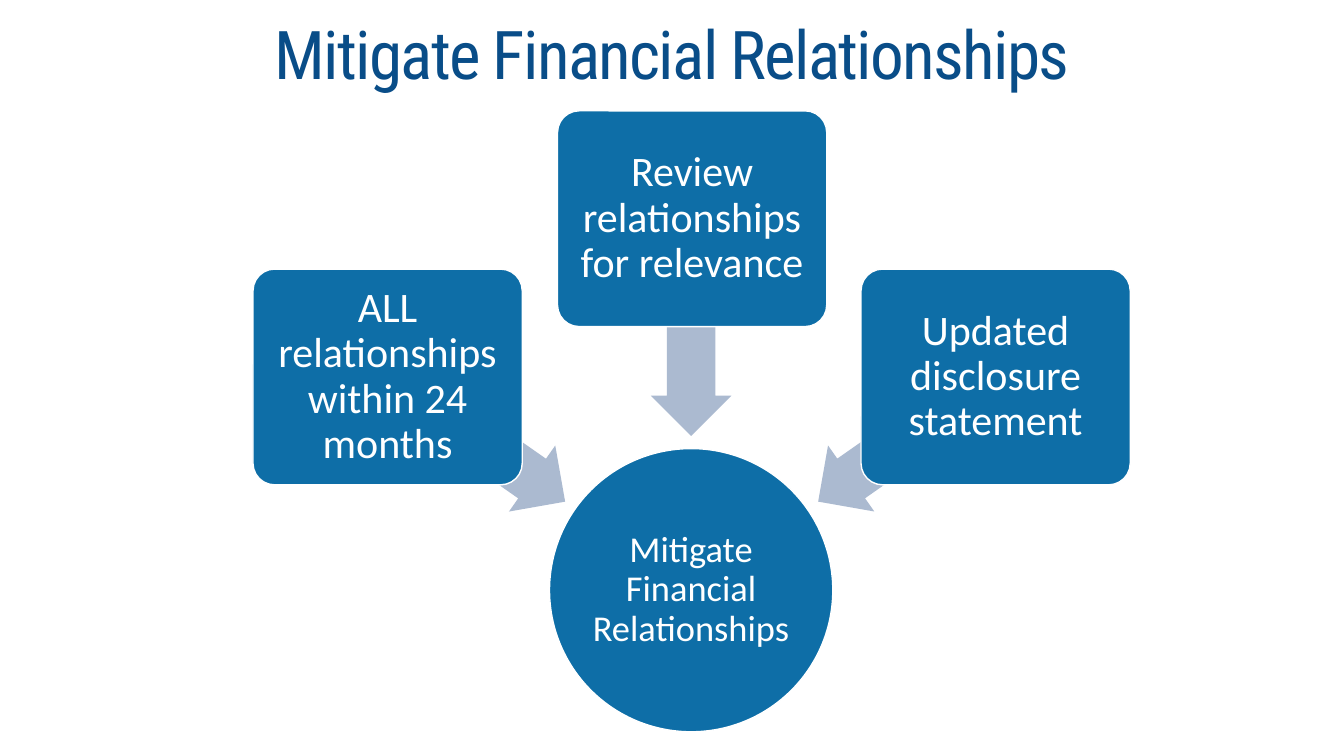
import pptx
import pptx.util
import pptx.dml.color
import pptx.enum.shapes
import pptx.enum.text

Inches = pptx.util.Inches
Pt = pptx.util.Pt
KIND = pptx.enum.shapes.MSO_SHAPE
ANCHOR = pptx.enum.text.MSO_ANCHOR
COLORS = {"blue": "0E6EA7", "arrow": "ABBAD0", "title": "094D88", "white": "FFFFFF"}

deck = pptx.Presentation()
deck.slide_width = Inches(13.33)
deck.slide_height = Inches(7.5)
slide = deck.slides.add_slide(deck.slide_layouts[6])


def draw(kind, left, top, width, height, fill, line=None):
    """Add a filled shape without shadow, outlined only if a line colour is given."""
    shape = slide.shapes.add_shape(
        kind, Inches(left), Inches(top), Inches(width), Inches(height))
    shape.shadow.inherit = False
    shape.fill.solid()
    shape.fill.fore_color.rgb = pptx.dml.color.RGBColor.from_string(COLORS[fill])
    if line:
        shape.line.color.rgb = pptx.dml.color.RGBColor.from_string(COLORS[line])
        shape.line.width = Pt(1)
    else:
        shape.line.fill.background()
    return shape


def write(shape, text, size, font="Calibri", color="white", inset=None,
          anchor=ANCHOR.MIDDLE, lead=0.9, after=0, track=None):
    frame = shape.text_frame
    frame.word_wrap = True
    frame.vertical_anchor = anchor
    if inset is not None:
        frame.margin_left = frame.margin_right = Inches(inset)
        frame.margin_top = frame.margin_bottom = Inches(inset)
    para = frame.paragraphs[0]
    para.alignment = pptx.enum.text.PP_ALIGN.CENTER
    para.line_spacing = lead
    para.space_after = Pt(after)
    run = para.add_run()
    run.text = text
    run.font.size = Pt(size)
    run.font.name = font
    run.font.color.rgb = pptx.dml.color.RGBColor.from_string(COLORS[color])
    if track is not None:
        run.font._element.set("spc", str(track))


# No inset: the longest word nearly fills the circle's inner square
goal = draw(KIND.OVAL, 5.45, 4.45, 2.81, 2.81, "blue", "white")
write(goal, "Mitigate Financial Relationships", 26, inset=0)

# Each step: text, box left and top, arrow left and top, arrow turn
steps = [
    ("ALL relationships within 24 months", 2.51, 2.67, 3.65, 3.96, 215),
    ("Review relationships for relevance", 5.53, 1.1, 5.78, 2.85, 270),
    ("Updated disclosure statement", 8.54, 2.67, 7.92, 3.96, 325),
]
for text, left, top, tip_x, tip_y, turn in steps:
    arrow = draw(KIND.LEFT_ARROW, tip_x, tip_y, 2.15, 0.8, "arrow")
    arrow.adjustments[0] = 0.6
    arrow.adjustments[1] = 0.5
    arrow.rotation = turn
    box = draw(KIND.ROUNDED_RECTANGLE, left, top, 2.67, 2.14, "blue", "white")
    box.adjustments[0] = 0.1
    write(box, text, 30, inset=0.06)

title = slide.shapes.add_textbox(Inches(0), Inches(0.07), Inches(13.33), Inches(0.9))
write(title, "Mitigate Financial Relationships", 48, font="Roboto Condensed",
      color="title", anchor=ANCHOR.BOTTOM, lead=0.8, after=6, track=-120)

deck.save("out.pptx")
